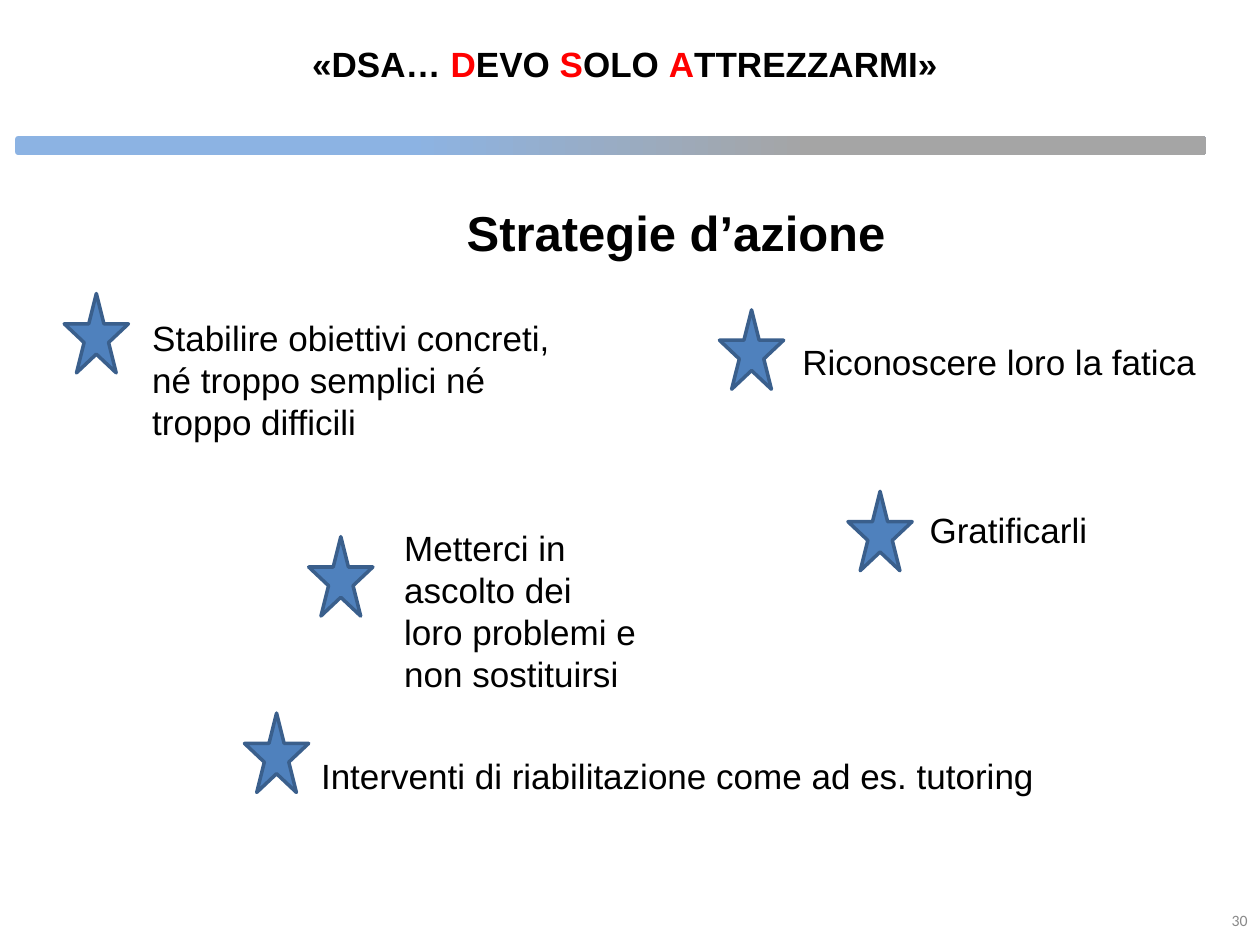
from pptx import Presentation
from pptx.dml.color import RGBColor
from pptx.enum.shapes import MSO_SHAPE
from pptx.enum.text import MSO_ANCHOR, MSO_AUTO_SIZE, PP_ALIGN
from pptx.util import Inches, Pt

STAR, BAR = MSO_SHAPE.STAR_5_POINT, MSO_SHAPE.ROUNDED_RECTANGLE
CENTER, LEFT, RIGHT = PP_ALIGN.CENTER, PP_ALIGN.LEFT, PP_ALIGN.RIGHT
TITLE_ONLY = 5

COLORS = {
    "text": "000000", "initial": "FF0000", "number": "898989",
    "star": "4F81BD", "star_line": "3A5F8C",
    "bar_start": "8CB3E3", "bar_end": "A5A5A5",
}
TITLE_RUNS = [
    ("«DSA… ", "text"), ("D", "initial"), ("EVO ", "text"), ("S", "initial"),
    ("OLO ", "text"), ("A", "initial"), ("TTREZZARMI»", "text"),
]
STAR_SIZE = (0.51, 0.63)
# Star position, text box, whether the text wraps, text
STRATEGIES = [
    ((0.51, 2.33), (1.11, 2.46, 3.5, 1.11), True,
     "Stabilire obiettivi concreti, né troppo semplici né troppo difficili"),
    ((5.71, 2.46), (6.27, 2.65, 3.35, 0.44), False, "Riconoscere loro la fatica"),
    ((2.45, 4.26), (3.11, 4.13, 2.04, 1.45), True,
     "Metterci in ascolto dei loro problemi e non sostituirsi"),
    ((6.73, 3.9), (7.28, 3.99, 1.47, 0.44), False, "Gratificarli"),
    ((1.94, 5.66), (2.45, 5.94, 5.9, 0.44), False,
     "Interventi di riabilitazione come ad es. tutoring"),
]


def rgb(name):
    return RGBColor.from_string(COLORS[name])


def inches(values):
    return [Inches(value) for value in values]


def format_run(run, size, color="text", bold=False, font="Arial"):
    run.font.name = font
    run.font.size = Pt(size)
    run.font.bold = bold
    run.font.color.rgb = rgb(color)


def add_text(slide, box, text, size, align=LEFT, wrap=True, **style):
    frame = slide.shapes.add_textbox(*inches(box)).text_frame
    frame.text = text
    frame.word_wrap = wrap
    paragraph = frame.paragraphs[0]
    paragraph.alignment = align
    format_run(paragraph.runs[0], size, **style)
    return frame


def add_bar(slide):
    bar = slide.shapes.add_shape(BAR, *inches((0.12, 1.08, 9.45, 0.15)))
    bar.shadow.inherit = False
    bar.line.fill.background()
    bar.fill.gradient()
    bar.fill.gradient_angle = 0
    stops = [("bar_start", 0.33), ("bar_end", 0.67)]
    for stop, (color, position) in zip(bar.fill.gradient_stops, stops):
        stop.color.rgb = rgb(color)
        stop.position = position


def fill_title(title):
    title.left, title.top, title.width, title.height = inches((0.12, 0.16, 9.6, 1.04))
    frame = title.text_frame
    frame.auto_size = MSO_AUTO_SIZE.NONE
    frame.vertical_anchor = MSO_ANCHOR.MIDDLE
    frame.margin_left, frame.margin_top, frame.margin_right, frame.margin_bottom = inches(
        (0.18, 0.1, 0.1, 0.41))
    paragraph = frame.paragraphs[0]
    paragraph.alignment = CENTER
    paragraph.line_spacing = 0.93
    for text, color in TITLE_RUNS:
        run = paragraph.add_run()
        run.text = text
        format_run(run, 20, color, bold=True)


def add_star(slide, position):
    star = slide.shapes.add_shape(STAR, *inches(position + STAR_SIZE))
    star.shadow.inherit = False
    star.fill.solid()
    star.fill.fore_color.rgb = rgb("star")
    star.line.color.rgb = rgb("star_line")
    star.line.width = Pt(2)


def main():
    presentation = Presentation()
    presentation.slide_width, presentation.slide_height = Inches(10), Inches(7.5)
    slide = presentation.slides.add_slide(presentation.slide_layouts[TITLE_ONLY])

    add_bar(slide)
    fill_title(slide.shapes.title)
    heading = add_text(slide, (0.85, 1.47, 8.88, 5.63), "Strategie d’azione", 28,
                       CENTER, bold=True)
    heading.margin_left, heading.margin_top = Inches(0.25), Inches(0.14)
    number = add_text(slide, (7.67, 7.1, 2.33, 0.4), "30", 9, RIGHT,
                      color="number", font="Calibri")
    number.vertical_anchor = MSO_ANCHOR.MIDDLE

    for star_position, text_box, wrap, text in STRATEGIES:
        add_star(slide, star_position)
        add_text(slide, text_box, text, 20, wrap=wrap)

    presentation.save("out.pptx")


if __name__ == "__main__":
    main()
